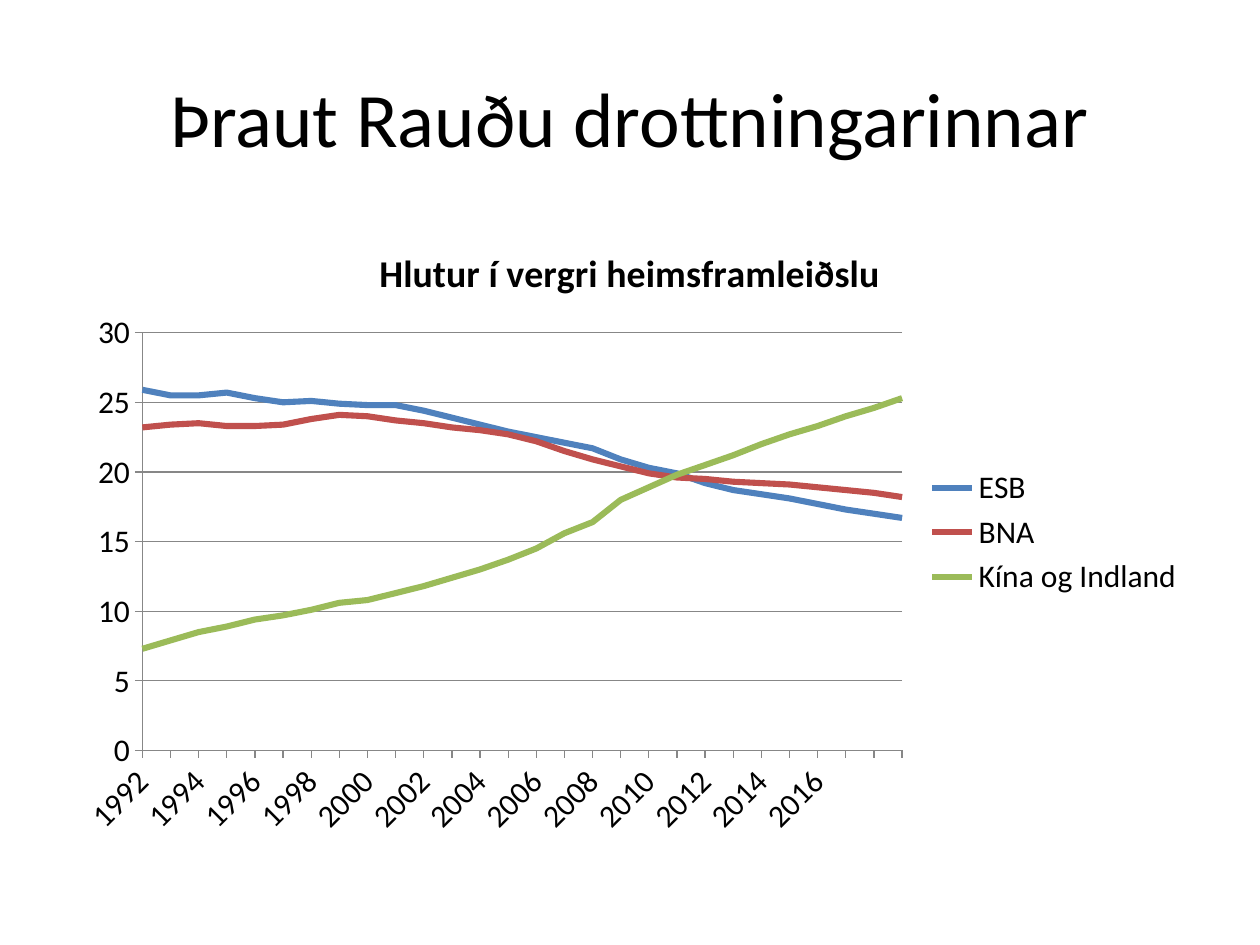
"""Build a slide with a line chart of shares in gross world product."""
from lxml import etree
from pptx import Presentation
from pptx.chart.data import CategoryChartData
from pptx.dml.color import RGBColor
from pptx.enum.chart import XL_CHART_TYPE, XL_LEGEND_POSITION, XL_MARKER_STYLE, XL_TICK_MARK
from pptx.enum.text import MSO_ANCHOR, PP_ALIGN
from pptx.oxml.ns import qn
from pptx.util import Inches, Pt

LINE_CHART = XL_CHART_TYPE.LINE
LEGEND_RIGHT = XL_LEGEND_POSITION.RIGHT
NO_MARKER = XL_MARKER_STYLE.NONE
TICK_OUTSIDE = XL_TICK_MARK.OUTSIDE
MIDDLE = MSO_ANCHOR.MIDDLE
CENTER = PP_ALIGN.CENTER

FONT = "Calibri"
COLORS = {
    "text": "000000",
    "axis": "878787",
    "ESB": "4F81BD",
    "BNA": "C0504D",
    "Kína og Indland": "9BBB59",
}
YEARS = [str(year) for year in range(1992, 2018)] + ["", ""]
SHARES = {
    "ESB": [25.9, 25.5, 25.5, 25.7, 25.3, 25, 25.1, 24.9, 24.8, 24.8, 24.4, 23.9, 23.4, 22.9,
            22.5, 22.1, 21.7, 20.9, 20.3, 19.9, 19.2, 18.7, 18.4, 18.1, 17.7, 17.3, 17, 16.7],
    "BNA": [23.2, 23.4, 23.5, 23.3, 23.3, 23.4, 23.8, 24.1, 24, 23.7, 23.5, 23.2, 23, 22.7,
            22.2, 21.5, 20.9, 20.4, 19.9, 19.6, 19.5, 19.3, 19.2, 19.1, 18.9, 18.7, 18.5, 18.2],
    "Kína og Indland": [7.3, 7.9, 8.5, 8.9, 9.4, 9.7, 10.1, 10.6, 10.8, 11.3, 11.8, 12.4, 13, 13.7,
                        14.5, 15.6, 16.4, 18, 18.9, 19.8, 20.5, 21.2, 22, 22.7, 23.3, 24, 24.6, 25.3],
}
PLOT_LAYOUT = {
    "layoutTarget": "inner", "xMode": "edge", "yMode": "edge",
    "x": 0.07, "y": 0.18, "w": 0.67, "h": 0.67,
}
VALUE_SCALE = {"minimum_scale": 0, "maximum_scale": 30, "major_unit": 5}


def color(name):
    """Return the named colour."""
    return RGBColor.from_string(COLORS[name])


def format_font(font, size, bold=False):
    """Apply the slide's font at the given size."""
    for attribute, value in {"name": FONT, "size": Pt(size), "bold": bold}.items():
        setattr(font, attribute, value)
    font.color.rgb = color("text")


def format_line(line, name, width):
    """Give a line its colour and width."""
    line.color.rgb = color(name)
    line.width = Pt(width)


def add_heading(slide, text):
    """Place and format the slide title."""
    heading = slide.shapes.title
    box = {"left": 0.5, "top": 0.3, "width": 9, "height": 1.25}
    for attribute, value in box.items():
        setattr(heading, attribute, Inches(value))
    heading.text_frame.text = text
    heading.text_frame.vertical_anchor = MIDDLE
    paragraph = heading.text_frame.paragraphs[0]
    paragraph.alignment = CENTER
    format_font(paragraph.runs[0].font, 44)


def set_plot_layout(chart):
    """Fix the inner plot area as fractions of the chart."""
    plot_area = chart.plots[0]._element.getparent()
    for old_layout in plot_area.findall(qn("c:layout")):
        plot_area.remove(old_layout)
    layout = etree.Element(qn("c:layout"))
    manual = etree.SubElement(layout, qn("c:manualLayout"))
    for tag, value in PLOT_LAYOUT.items():
        etree.SubElement(manual, qn(f"c:{tag}")).set("val", str(value))
    plot_area.insert(0, layout)


def format_axes(chart):
    """Format both axes, with the first year on the value axis."""
    years, shares = chart.category_axis, chart.value_axis
    for axis in (years, shares):
        axis.major_tick_mark = TICK_OUTSIDE
        format_line(axis.format.line, "axis", 0.75)
        format_font(axis.tick_labels.font, 18)
    years.tick_labels.font._element.getparent().getparent().getparent().find(
        qn("a:bodyPr")).set("rot", "-2700000")
    for attribute, value in VALUE_SCALE.items():
        setattr(shares, attribute, value)
    shares.tick_labels.number_format = "0"
    shares.tick_labels.number_format_is_linked = False
    format_line(shares.major_gridlines.format.line, "axis", 0.75)
    value_axis = shares._element
    cross_between = value_axis.find(qn("c:crossBetween"))
    if cross_between is None:
        cross_between = etree.Element(qn("c:crossBetween"))
        value_axis.find(qn("c:crosses")).addnext(cross_between)
    cross_between.set("val", "midCat")


def add_share_chart(slide, title):
    """Add the line chart of shares by year."""
    data = CategoryChartData(number_format="0.0")
    data.categories = YEARS
    for region, values in SHARES.items():
        data.add_series(region, values)
    chart = slide.shapes.add_chart(
        LINE_CHART, Inches(0.5), Inches(1.75), Inches(9), Inches(4.95), data).chart
    format_font(chart.font, 18)
    chart.has_title = True
    chart.chart_title.text_frame.text = title
    format_font(chart.chart_title.text_frame.paragraphs[0].runs[0].font, 21.6, True)
    chart.chart_title.include_in_layout = False
    chart.has_legend = True
    chart.legend.position = LEGEND_RIGHT
    chart.legend.include_in_layout = False
    format_font(chart.legend.font, 18)
    chart.plots[0].vary_by_categories = False
    for series in chart.plots[0].series:
        series.smooth = False
        series.marker.style = NO_MARKER
        format_line(series.format.line, series.name, 3.5)
    format_axes(chart)
    set_plot_layout(chart)


def main():
    """Build and save the slide."""
    presentation = Presentation()
    presentation.slide_width, presentation.slide_height = Inches(10), Inches(7.5)
    slide = presentation.slides.add_slide(presentation.slide_layouts[5])
    add_heading(slide, "Þraut Rauðu drottningarinnar")
    add_share_chart(slide, "Hlutur í vergri heimsframleiðslu")
    presentation.save("out.pptx")


if __name__ == "__main__":
    main()
